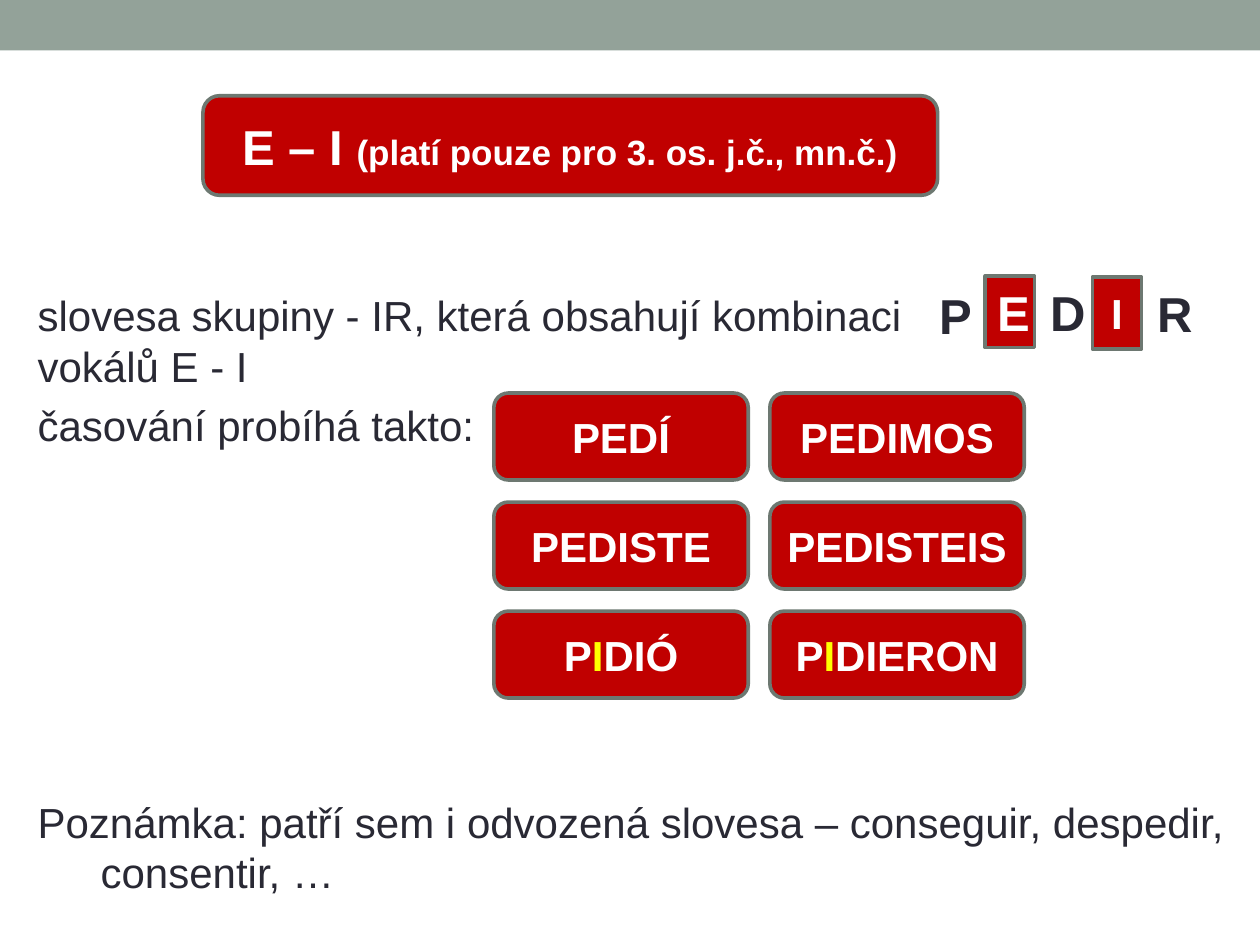
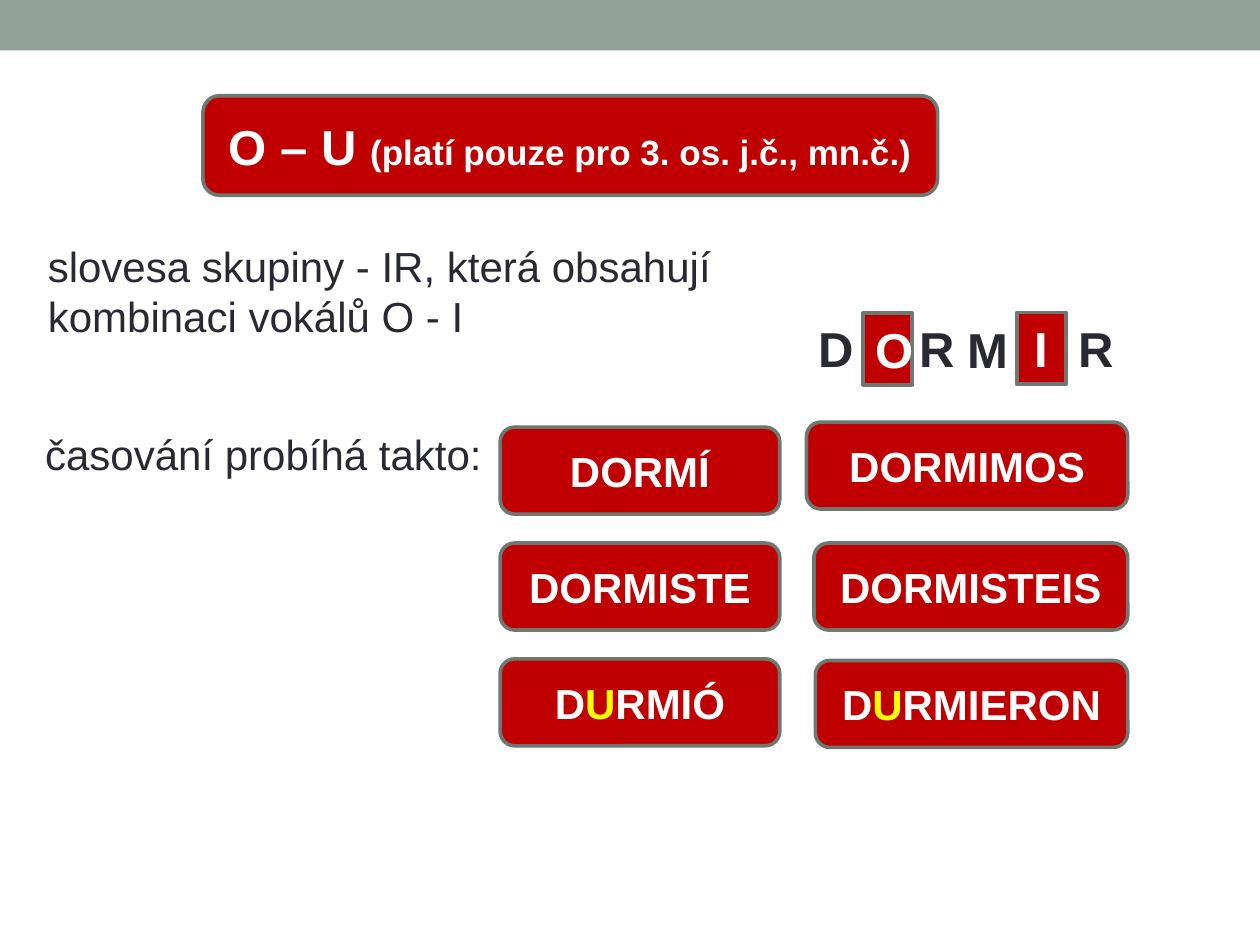
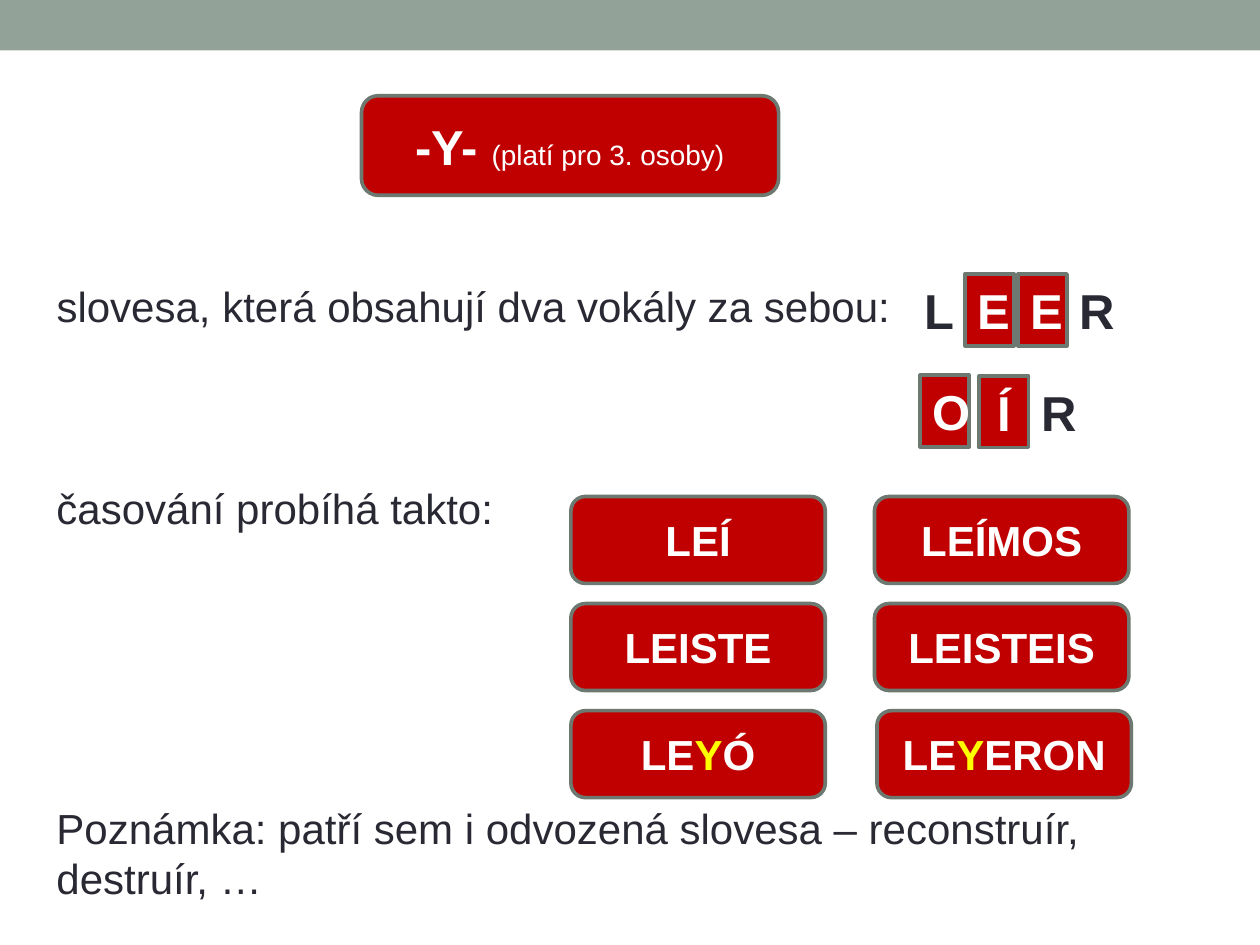
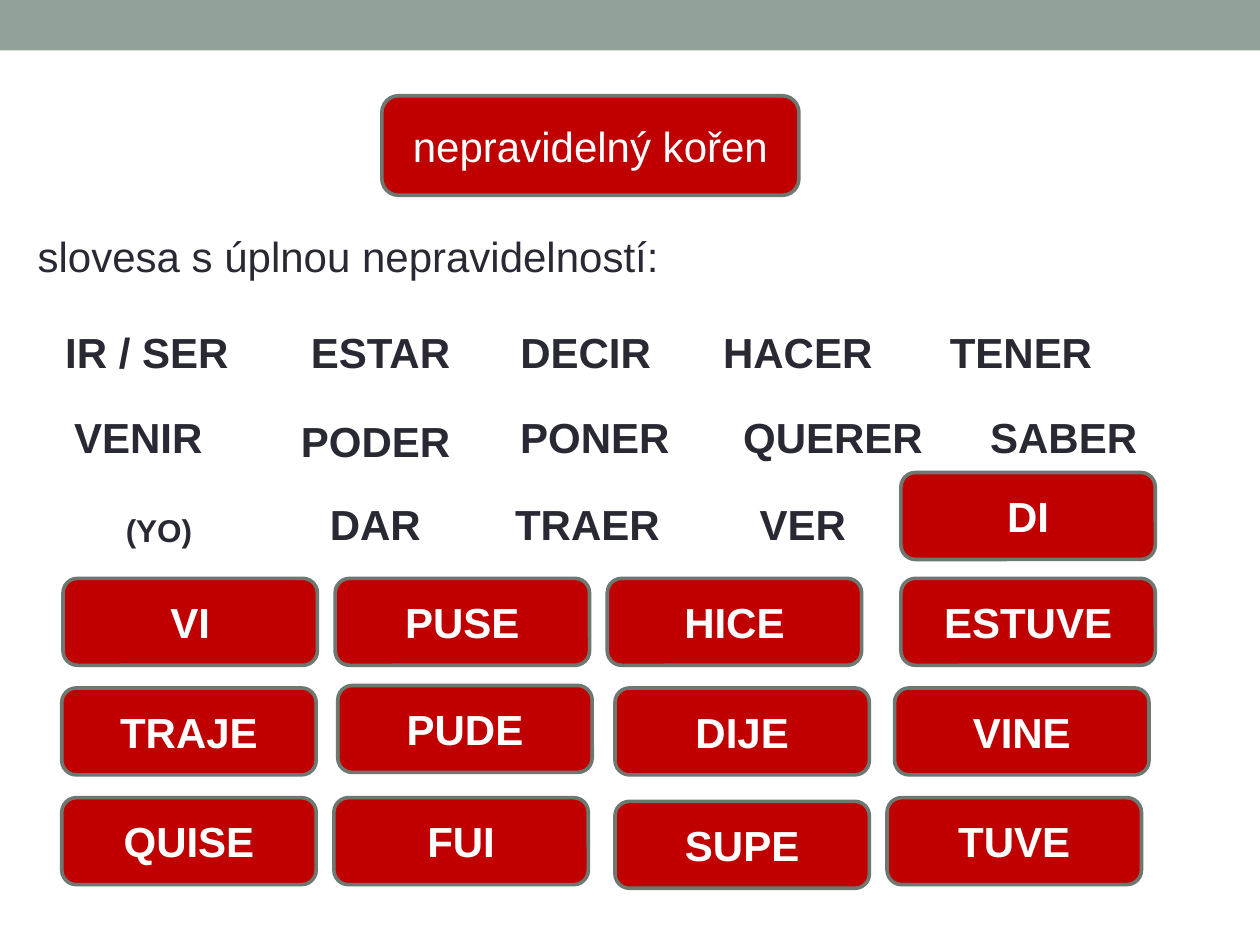
from dataclasses import dataclass

from pptx import Presentation
from pptx.dml.color import RGBColor
from pptx.enum.shapes import MSO_SHAPE
from pptx.enum.text import MSO_ANCHOR, MSO_AUTO_SIZE, PP_ALIGN
from pptx.util import Pt

RECT = MSO_SHAPE.RECTANGLE
ROUNDED = MSO_SHAPE.ROUNDED_RECTANGLE
MIDDLE = MSO_ANCHOR.MIDDLE
CENTER = PP_ALIGN.CENTER
GROW = MSO_AUTO_SIZE.SHAPE_TO_FIT_TEXT

FONT = "Arial"
BAND, RED, BORDER = "93A299", "C00000", "6D7871"
DARK, WHITE, YELLOW = "292934", "FFFFFF", "FFFF00"

SLIDE_WIDTH, SLIDE_HEIGHT = 720, 540
TITLE_TOP, TITLE_HEIGHT = 54.7, 56.9
CARD_WIDTH, CARD_HEIGHT = 145.4, 49.7
TILE_WIDTH, LETTER_HEIGHT = 28.1, 41
LETTER_WIDTHS = {"P": 33.1, "L": 31.7, "M": 38.2, "D": 35.3, "R": 35.3}
LINE_HEIGHT, TWO_LINES = 36, 65.5


@dataclass
class Span:
    text: str
    size: float = 24
    bold: bool = True
    color: str = WHITE


@dataclass
class Card:
    """A verb form; letters between asterisks are highlighted."""
    word: str
    left: float
    top: float
    width: float = CARD_WIDTH


@dataclass
class Letter:
    text: str
    left: float
    top: float
    tile: bool = False
    size: float = 28


@dataclass
class Note:
    lines: list[str]
    left: float
    top: float
    width: float
    height: float = LINE_HEIGHT
    wrap: bool = False
    bold: bool = False
    size: float = 24


def rgb(color: str) -> RGBColor:
    return RGBColor.from_string(color)


def add_spans(paragraph, spans: list[Span]) -> None:
    for span in spans:
        run = paragraph.add_run()
        run.text = span.text
        run.font.name = FONT
        run.font.size = Pt(span.size)
        run.font.bold = span.bold
        run.font.color.rgb = rgb(span.color)


def draw_block(slide, kind, left: float, top: float, width: float,
               height: float, fill: str, border: str | None = None):
    block = slide.shapes.add_shape(kind, Pt(left), Pt(top), Pt(width), Pt(height))
    block.shadow.inherit = False
    block.fill.solid()
    block.fill.fore_color.rgb = rgb(fill)
    if border:
        block.line.color.rgb = rgb(border)
        block.line.width = Pt(2.08)
    else:
        block.line.fill.background()
    return block


def draw_red(slide, kind, left: float, top: float, width: float, height: float,
             spans: list[Span], wrap: bool = True) -> None:
    frame = draw_block(slide, kind, left, top, width, height, RED, BORDER).text_frame
    frame.word_wrap = wrap
    frame.vertical_anchor = MIDDLE
    frame.paragraphs[0].alignment = CENTER
    add_spans(frame.paragraphs[0], spans)


def draw_note(slide, note: Note) -> None:
    frame = slide.shapes.add_textbox(Pt(note.left), Pt(note.top), Pt(note.width),
                                     Pt(note.height)).text_frame
    frame.word_wrap = note.wrap
    frame.auto_size = GROW
    for index, line in enumerate(note.lines):
        paragraph = frame.add_paragraph() if index else frame.paragraphs[0]
        add_spans(paragraph, [Span(line, note.size, note.bold, DARK)])


def draw_letter(slide, letter: Letter) -> None:
    if letter.tile:
        draw_red(slide, RECT, letter.left, letter.top, TILE_WIDTH, LETTER_HEIGHT,
                 [Span(letter.text, letter.size)])
    else:
        draw_note(slide, Note([letter.text], letter.left, letter.top,
                              LETTER_WIDTHS[letter.text], LETTER_HEIGHT,
                              bold=True, size=letter.size))


def draw_card(slide, card: Card) -> None:
    spans = [Span(part, color=YELLOW if index % 2 else WHITE)
             for index, part in enumerate(card.word.split("*"))]
    draw_red(slide, ROUNDED, card.left, card.top, card.width, CARD_HEIGHT,
             spans, wrap=False)


def card_column(words: list[str], left: float, top: float, step: float,
                width: float = CARD_WIDTH) -> list[Card]:
    return [Card(word, left, top + row * step, width)
            for row, word in enumerate(words)]


def conjugation_note(left: float, top: float) -> Note:
    return Note(["časování probíhá takto:"], left, top, 266.4)


def build_slide(prs, title: list[Span], title_left: float, title_width: float,
                notes: list[Note], letters: list[Letter], cards: list[Card]) -> None:
    slide = prs.slides.add_slide(prs.slide_layouts[6])
    draw_block(slide, RECT, 0, 0, SLIDE_WIDTH, 28.8, BAND)
    draw_red(slide, ROUNDED, title_left, TITLE_TOP, title_width, TITLE_HEIGHT, title)
    for note in notes:
        draw_note(slide, note)
    for letter in letters:
        draw_letter(slide, letter)
    for card in cards:
        draw_card(slide, card)


def vowel_title(change: str) -> list[Span]:
    return [Span(change, 28), Span("(platí pouze pro 3. os. j.č., mn.č.)", 20)]


def main() -> None:
    prs = Presentation()
    prs.slide_width, prs.slide_height = Pt(SLIDE_WIDTH), Pt(SLIDE_HEIGHT)

    # E – I: pedir
    build_slide(
        prs, vowel_title("E – I "), 116, 419.8,
        notes=[
            Note(["slovesa skupiny - IR, která obsahují kombinaci", "vokálů E - I"],
                 14.4, 162, 519.8, TWO_LINES),
            conjugation_note(14.4, 224.6),
            Note(["Poznámka: patří sem i odvozená slovesa – conseguir, despedir,",
                  "\tconsentir, …"], 14.4, 451.4, 699.1, TWO_LINES),
        ],
        letters=[
            Letter("P", 529.9, 159.8), Letter("D", 593.3, 157.7),
            Letter("R", 654.5, 158.4), Letter("E", 563, 157.7, tile=True),
            Letter("I", 624.2, 158.4, tile=True, size=24),
        ],
        cards=card_column(["PEDÍ", "PEDISTE", "P*I*DIÓ"], 282.2, 224.6, 62.3)
        + card_column(["PEDIMOS", "PEDISTEIS", "P*I*DIERON"], 439.9, 224.6, 62.3))

    # O – U: dormir
    build_slide(
        prs, vowel_title("O – U "), 116, 419.8,
        notes=[
            Note(["slovesa skupiny - IR, která obsahují kombinaci vokálů O - I"],
                 20.2, 133.9, 504.7, TWO_LINES, wrap=True),
            conjugation_note(18.7, 241.2),
        ],
        letters=[
            Letter("O", 493.2, 178.9, tile=True), Letter("I", 581, 178.6, tile=True),
            Letter("D", 460.8, 178.6), Letter("R", 518.4, 178.6),
            Letter("M", 545.8, 179), Letter("R", 609.1, 178.2),
        ],
        cards=card_column(["DORMÍ", "DORMISTE", "D*U*RMIÓ"], 285.8, 244.1, 66.2, 159.8)
        + [Card("DORMIMOS", 460.8, 241.2, 183.6),
           Card("DORMISTEIS", 465.1, 310.3, 179.3),
           Card("D*U*RMIERON", 465.9, 377.4, 178.5)])

    # -Y-: leer, oír
    build_slide(
        prs, [Span("-Y- ", 28), Span("(platí pro 3. osoby)", 16, bold=False)],
        206.6, 238.3,
        notes=[
            Note(["slovesa, která obsahují dva vokály za sebou:"], 25.2, 157, 495.4),
            conjugation_note(25.2, 272.2),
            Note(["Poznámka: patří sem i odvozená slovesa – reconstruír, destruír, …"],
                 25.2, 455, 652.3, TWO_LINES, wrap=True),
        ],
        letters=[
            Letter("E", 581.6, 156.6, tile=True), Letter("E", 551.5, 156.6, tile=True),
            Letter("L", 521.3, 157), Letter("R", 609.8, 157),
            Letter("Í", 559.6, 214.8, tile=True), Letter("O", 525.8, 214.4, tile=True),
            Letter("R", 588.2, 214.8),
        ],
        cards=card_column(["LEÍ", "LEISTE", "LE*Y*Ó"], 326.2, 283.7, 61.2)
        + card_column(["LEÍMOS", "LEISTEIS"], 499.7, 283.7, 61.2)
        + [Card("LE*Y*ERON", 501.1, 406.1)])

    # Irregular stems: infinitives above, first-person forms below
    infinitives = [
        ("IR / SER", 30.2, 182.9, 108.7), ("ESTAR", 170.6, 182.9, 95),
        ("DECIR", 290.2, 182.9, 90), ("HACER", 406.1, 182.9, 100.8),
        ("TENER", 535.7, 182.9, 96.5), ("VENIR", 35.3, 231.8, 88.6),
        ("PODER", 164.9, 234, 100.8), ("PONER", 290.2, 231.8, 100.8),
        ("QUERER", 417.6, 231.8, 118.1), ("SABER", 558.7, 231.8, 99.4),
        ("DAR", 181.4, 281.5, 67), ("TRAER", 287.3, 281.5, 97.9),
        ("VER", 427, 281.5, 64.1),
    ]
    build_slide(
        prs, [Span("nepravidelný kořen", bold=False)], 218.2, 238.3,
        notes=[Note(["slovesa s úplnou nepravidelností:"], 14.4, 128.2, 373)]
        + [Note([verb], left, top, width, bold=True)
           for verb, left, top, width in infinitives]
        + [Note(["(YO)"], 64.8, 288.7, 52.6, 28.8, bold=True, size=18)],
        letters=[],
        cards=[
            Card("DI", 514.8, 270),
            Card("VI", 36, 330.5), Card("PUSE", 191.5, 330.5),
            Card("HICE", 347, 330.5), Card("ESTUVE", 514.8, 330.5),
            Card("TRAJE", 35.3, 393.1), Card("PUDE", 193, 391.7),
            Card("DIJE", 351.4, 393.1), Card("VINE", 511.2, 393.1),
            Card("QUISE", 35.3, 455.8), Card("FUI", 190.8, 455.8),
            Card("SUPE", 351.4, 457.9), Card("TUVE", 506.9, 455.8),
        ])

    prs.save("out.pptx")


if __name__ == "__main__":
    main()
